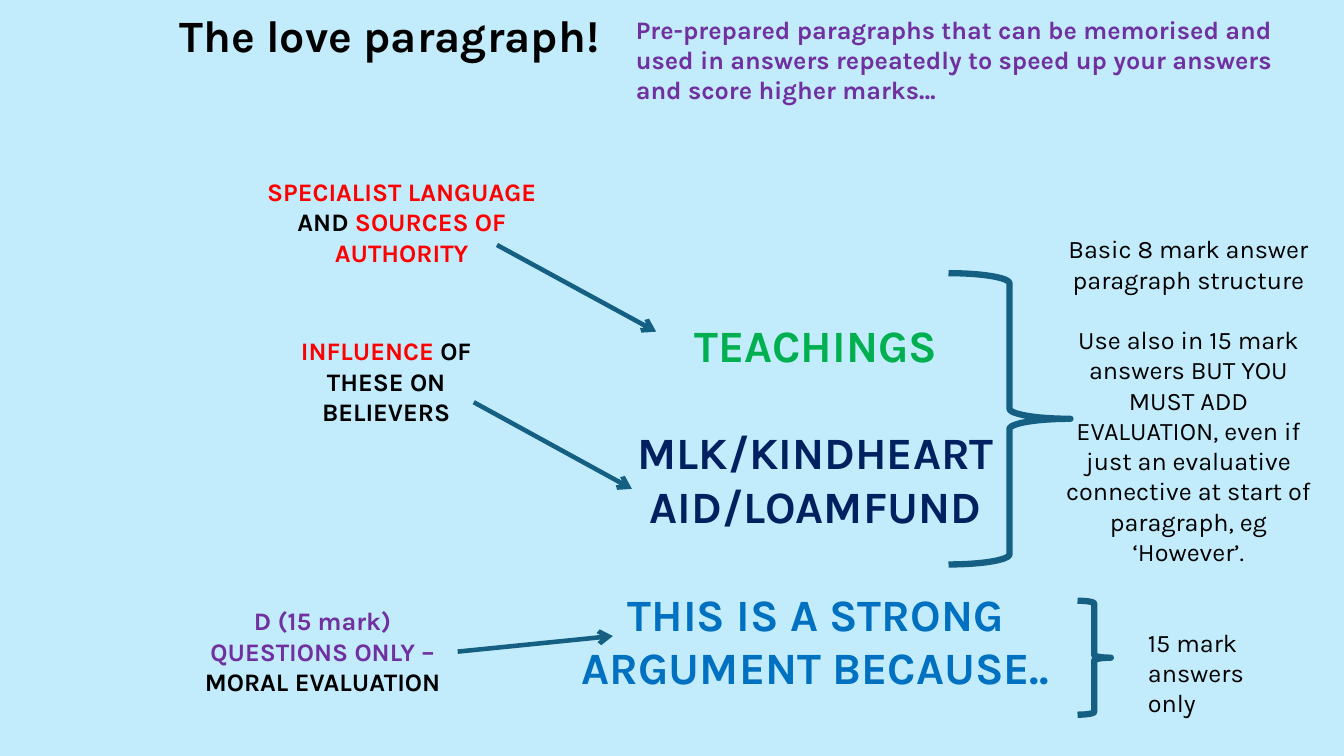
from dataclasses import dataclass

from lxml import etree
from pptx import Presentation
from pptx.dml.color import RGBColor
from pptx.enum.shapes import MSO_CONNECTOR, MSO_SHAPE
from pptx.enum.text import MSO_ANCHOR, MSO_AUTO_SIZE, PP_ALIGN
from pptx.oxml.ns import qn
from pptx.util import Pt

LEFT, CENTER = PP_ALIGN.LEFT, PP_ALIGN.CENTER
TOP = MSO_ANCHOR.TOP
GROW = MSO_AUTO_SIZE.SHAPE_TO_FIT_TEXT
STRAIGHT = MSO_CONNECTOR.STRAIGHT
RIGHT_BRACE = MSO_SHAPE.RIGHT_BRACE
RIGHT_SIDE = 3

FONT = "Karla"
LINE_HEIGHT = 1.2
COLORS = {
    "background": "C2ECFB",
    "black": "000000",
    "red": "FF0000",
    "purple": "7030A0",
    "green": "00B050",
    "navy": "002060",
    "blue": "0070C0",
    "line": "156082",
}

Box = tuple[float, float, float, float]
Point = tuple[float, float]
Paragraph = list[tuple[str, str]]  # (wording, colour name) per run


@dataclass
class Label:
    box: Box
    paragraphs: list[Paragraph]
    size: float = 18
    bold: bool = True
    align: PP_ALIGN = CENTER


@dataclass
class Arrow:
    start: Point
    end: Point


TITLE = Label((121, 2.2, 380.2, 46.1), [[("The love paragraph!", "black")]],
              size=32, align=LEFT)
STEPS = Label((390.2, 223.2, 385.2, 278.6), [
    [("TEACHINGS", "green")],
    [("MLK/KINDHEART AID/LOAMFUND", "navy")],
    [("THIS IS A STRONG ARGUMENT BECAUSE..", "blue")],
], size=32)
EVALUATION = Label((133.9, 429.1, 193, 72.7), [
    [("D (15 mark) QUESTIONS ONLY – ", "purple"), ("MORAL EVALUATION", "black")],
])
LABELS = [
    Label((179.3, 122.4, 215.3, 72.7), [
        [("SPECIALIST LANGUAGE ", "red"), ("AND ", "black"),
         ("SOURCES OF AUTHORITY", "red")],
    ]),
    Label((179.3, 236.2, 193, 72.7), [
        [("INFLUENCE ", "red"), ("OF THESE ON BELIEVERS", "black")],
    ]),
    Label((752.4, 163.4, 193, 247), [
        [("Basic 8 mark answer paragraph structure", "black")],
        [("Use also in 15 mark answers BUT YOU MUST ADD EVALUATION, even if just "
          "an evaluative connective at start of paragraph, eg ‘However’.", "black")],
    ], bold=False),
    Label((812.9, 444.2, 111.6, 72.7), [[("15 mark answers only", "black")]],
          bold=False, align=LEFT),
    Label((447.1, 6.5, 480.2, 72.7), [
        [("Pre-prepared paragraphs that can be memorised and used in answers "
          "repeatedly to speed up your answers and score higher marks…", "purple")],
    ], align=LEFT),
]
EVALUATION_ARROW = Arrow((326.9, 465.45), (437.8, 454.3))
ARROWS = [
    Arrow((355, 175), (468.7, 236.9)),
    Arrow((338.4, 287.3), (451.4, 349.2)),
]
BRACES: list[Box] = [(677.5, 195.1, 87.1, 208.1), (769.7, 429.1, 23.8, 81.4)]


def rgb(name: str) -> RGBColor:
    return RGBColor.from_string(COLORS[name])


def fill_label(shape, label: Label) -> None:
    """Place a text shape and write the label into it."""
    shape.left, shape.top, shape.width, shape.height = map(Pt, label.box)
    frame = shape.text_frame
    frame.word_wrap = True
    frame.auto_size = GROW
    frame.vertical_anchor = TOP
    for index, runs in enumerate(label.paragraphs):
        paragraph = frame.add_paragraph() if index else frame.paragraphs[0]
        paragraph.alignment = label.align
        paragraph.line_spacing = 1.0
        # One line of space separates paragraphs
        paragraph.space_before = Pt(label.size * LINE_HEIGHT if index else 0)
        paragraph.space_after = Pt(0)
        for wording, color in runs:
            run = paragraph.add_run()
            run.text = wording
            run.font.name = FONT
            run.font.size = Pt(label.size)
            run.font.bold = label.bold
            run.font.color.rgb = rgb(color)


def remove_bullets(shape) -> None:
    for paragraph in shape.text_frame.paragraphs:
        properties = paragraph._p.get_or_add_pPr()
        properties.set("marL", "0")
        properties.set("indent", "0")
        etree.SubElement(properties, qn("a:buNone"))


def add_label(slide, label: Label):
    textbox = slide.shapes.add_textbox(*map(Pt, label.box))
    fill_label(textbox, label)
    return textbox


def add_arrow(slide, arrow: Arrow):
    connector = slide.shapes.add_connector(
        STRAIGHT, *map(Pt, arrow.start + arrow.end))
    connector.line.color.rgb = rgb("line")
    connector.line.width = Pt(3.25)
    etree.SubElement(connector.line._get_or_add_ln(), qn("a:tailEnd"), type="arrow")
    etree.SubElement(connector._element.spPr, qn("a:effectLst"))
    return connector


def add_brace(slide, box: Box) -> None:
    brace = slide.shapes.add_shape(RIGHT_BRACE, *map(Pt, box))
    brace.shadow.inherit = False
    brace.fill.background()
    brace.line.color.rgb = rgb("line")
    brace.line.width = Pt(4.5)


def main() -> None:
    presentation = Presentation()
    presentation.slide_width, presentation.slide_height = Pt(960), Pt(540)
    slide = presentation.slides.add_slide(presentation.slide_layouts[1])
    slide.background.fill.solid()
    slide.background.fill.fore_color.rgb = rgb("background")

    # Title and the steps of the paragraph
    fill_label(slide.shapes.title, TITLE)
    steps = slide.placeholders[1]
    fill_label(steps, STEPS)
    remove_bullets(steps)

    # Arrows from the requirements to the steps
    for arrow in ARROWS:
        add_arrow(slide, arrow)
    evaluation = add_label(slide, EVALUATION)
    add_arrow(slide, EVALUATION_ARROW).begin_connect(evaluation, RIGHT_SIDE)

    # Requirements, mark notes and braces
    for label in LABELS:
        add_label(slide, label)
    for box in BRACES:
        add_brace(slide, box)

    presentation.save("out.pptx")


if __name__ == "__main__":
    main()
